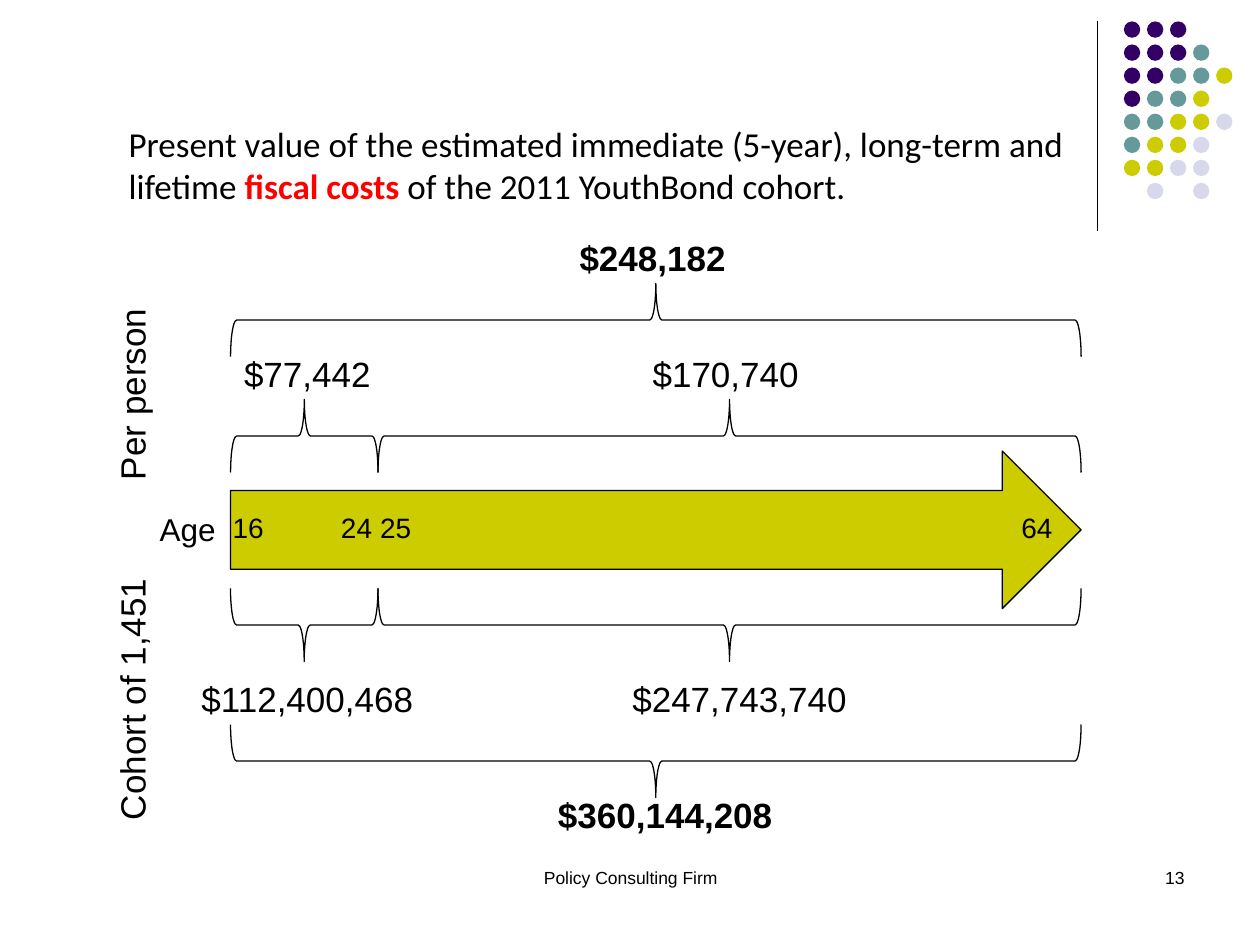
"""Build a slide of fiscal costs by age span, per person and for the cohort."""
from lxml.etree import SubElement
from pptx import Presentation
from pptx.dml.color import RGBColor
from pptx.enum.shapes import MSO_CONNECTOR, MSO_SHAPE as Shape
from pptx.enum.text import MSO_ANCHOR, MSO_AUTO_SIZE, PP_ALIGN as Align
from pptx.oxml.ns import qn
from pptx.util import Inches, Pt

BLACK = RGBColor(0x00, 0x00, 0x00)
RED = RGBColor(0xFF, 0x00, 0x00)
PURPLE = RGBColor(0x33, 0x00, 0x66)
TEAL = RGBColor(0x66, 0x99, 0x99)
OLIVE = RGBColor(0xCC, 0xCC, 0x00)
LILAC = RGBColor(0xD8, 0xD8, 0xEC)

TITLE = [
    ("Present value of the estimated immediate (5-year), long-term and lifetime ", BLACK, False),
    ("fiscal costs ", RED, True),
    ("of the 2011 YouthBond cohort.", BLACK, False),
]
DOT_ROWS = ["PPP", "PPPT", "PPTTO", "PTTO", "TTOOL", "TOOL", "OOLL", " L L"]
DOT_COLORS = {"P": PURPLE, "T": TEAL, "O": OLIVE, "L": LILAC}

START, SPLIT, END = 1.83, 3.0, 8.58
BRACE_DEPTH = 0.58
UP, DOWN = 90, 270
BRACES = [
    (START, END, 2.54, UP), (START, SPLIT, 3.46, UP), (SPLIT, END, 3.46, UP),
    (START, SPLIT, 4.96, DOWN), (SPLIT, END, 4.96, DOWN), (START, END, 6.04, DOWN),
]
AMOUNTS = [
    ("$248,182", 5.18, 2.05, True), ("$77,442", 2.44, 2.97, False),
    ("$170,740", 5.76, 2.97, False), ("$112,400,468", 2.44, 5.55, False),
    ("$247,743,740", 5.87, 5.55, False), ("$360,144,208", 5.28, 6.47, True),
]
AGES = [("16", 1.97), ("24", 2.83), ("25", 3.14), ("64", 8.23)]
GROUPS = [("Per person", 3.13), ("Cohort of 1,451", 5.55)]

deck = Presentation()
deck.slide_width, deck.slide_height = Inches(10), Inches(7.5)
slide = deck.slides.add_slide(deck.slide_layouts[5])
shapes = slide.shapes


def box(left, top, width, height):
    return [Inches(v) for v in (left, top, width, height)]


def centred(x, y, width, height):
    return box(x - width / 2, y - height / 2, width, height)


def add_run(paragraph, text, size, color=BLACK, bold=False, font="Arial"):
    run = paragraph.add_run()
    run.text = text
    run.font.name, run.font.size, run.font.bold = font, Pt(size), bold
    run.font.color.rgb = color


def add_label(text, place, size, bold=False, align=Align.CENTER, rotation=0):
    label = shapes.add_textbox(*place)
    label.rotation = rotation
    label.text_frame.word_wrap = True
    paragraph = label.text_frame.paragraphs[0]
    paragraph.alignment = align
    add_run(paragraph, text, size, bold=bold)


def add_outline(kind, place, fill=None, outlined=True):
    outline = shapes.add_shape(kind, *place)
    outline.shadow.inherit = False
    if fill is None:
        outline.fill.background()
    else:
        outline.fill.solid()
        outline.fill.fore_color.rgb = fill
    if outlined:
        outline.line.color.rgb = BLACK
        outline.line.width = Pt(0.75)
    else:
        outline.line.fill.background()
    return outline


title = shapes.title
title.left, title.top, title.width, title.height = box(0.92, 0.92, 7.67, 0.77)
title.text_frame.word_wrap = True
title.text_frame.auto_size = MSO_AUTO_SIZE.NONE
title.text_frame.vertical_anchor = MSO_ANCHOR.TOP
title.text_frame.paragraphs[0].alignment = Align.LEFT
for text, color, bold in TITLE:
    add_run(title.text_frame.paragraphs[0], text, 20, color, bold, "Calibri")

divider = shapes.add_connector(MSO_CONNECTOR.STRAIGHT, *box(8.71, 0.17, 8.71, 1.83))
divider.line.color.rgb = BLACK
divider.line.width = Pt(0.75)
SubElement(divider._element.spPr, qn("a:effectLst"))

DOT_PITCH, DOT_SIZE = 0.183, 0.13
for row, dots in enumerate(DOT_ROWS):
    for column, dot in enumerate(dots):
        if dot in DOT_COLORS:
            place = box(8.92 + column * DOT_PITCH, 0.17 + row * DOT_PITCH, DOT_SIZE, DOT_SIZE)
            add_outline(Shape.OVAL, place, DOT_COLORS[dot], outlined=False)

add_outline(Shape.RIGHT_ARROW, box(START, 3.58, END - START, 1.25), OLIVE)
for left, right, y, direction in BRACES:
    place = centred((left + right) / 2, y, BRACE_DEPTH, right - left)
    add_outline(Shape.LEFT_BRACE, place).rotation = direction

for amount, x, y, bold in AMOUNTS:
    add_label(amount, centred(x, y, 2, 0.44), 20, bold)
for age, x in AGES:
    add_label(age, centred(x, 4.19, 0.5, 0.37), 16)
for group, y in GROUPS:
    add_label(group, centred(1.05, y, 2.2, 0.44), 20, rotation=270)
add_label("Age", centred(1.49, 4.2, 0.75, 0.4), 18)
add_label("Policy Consulting Firm", box(3.42, 6.83, 3.17, 0.5), 10)
add_label("13", box(7.17, 6.83, 2.33, 0.5), 10, align=Align.RIGHT)

deck.save("out.pptx")
